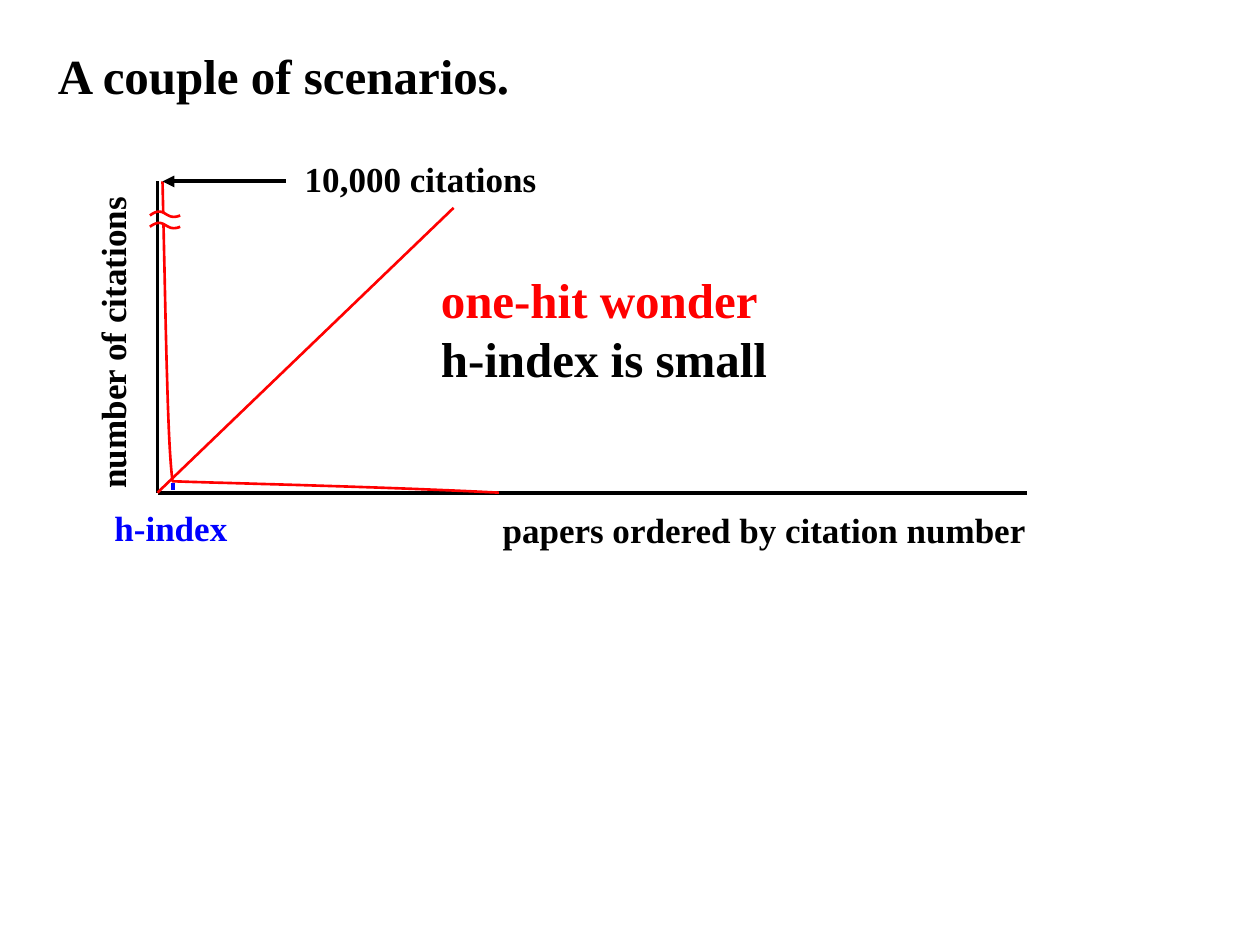
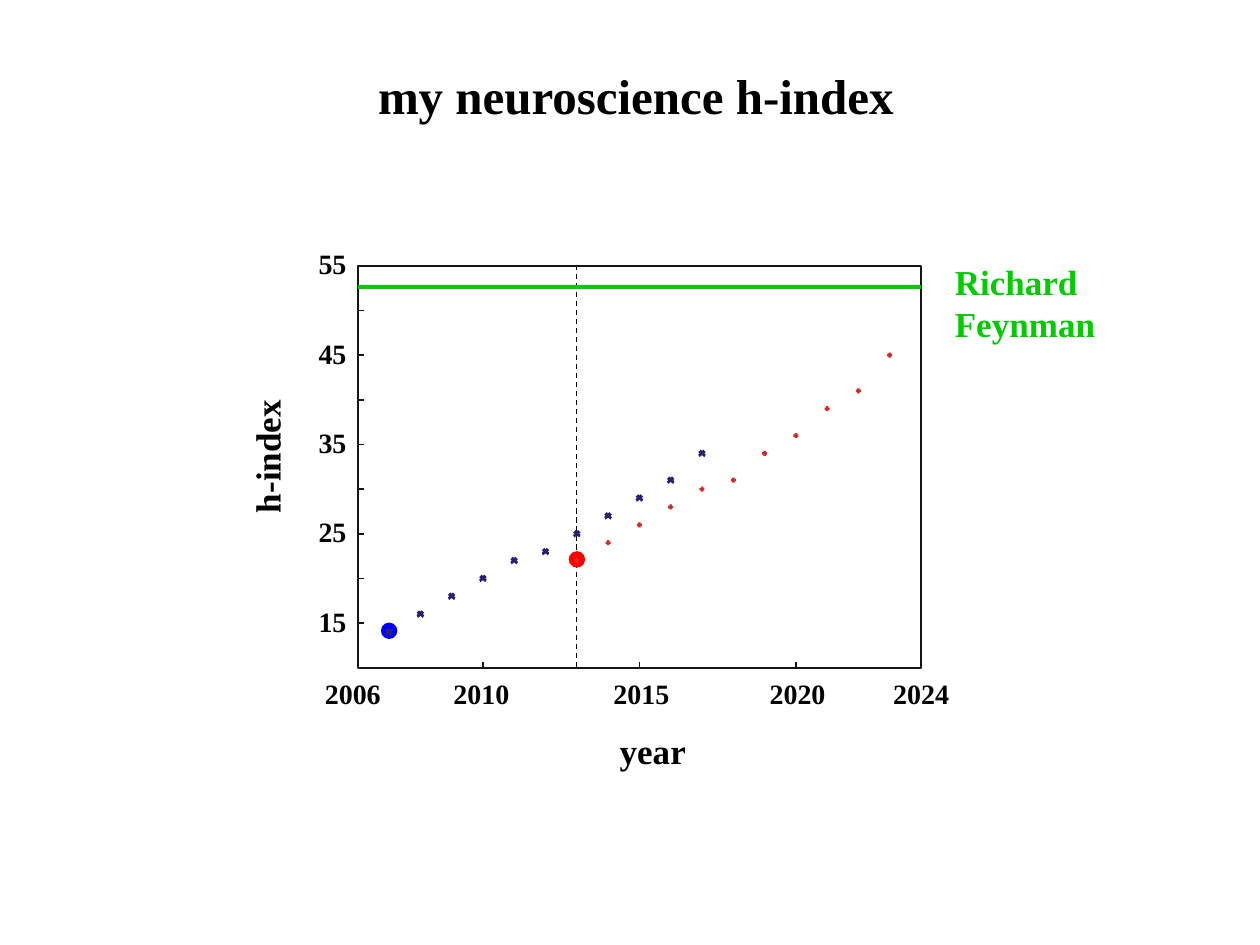
"""Build two slides on the h-index: a one-hit wonder and a personal history."""
import math

import pptx
import pptx.dml.color
import pptx.enum.dml
import pptx.enum.shapes
import pptx.enum.text
import pptx.oxml.ns
import pptx.util
from lxml import etree

Inches = pptx.util.Inches
RGBColor = pptx.dml.color.RGBColor
SHAPES = pptx.enum.shapes.MSO_SHAPE
BLACK = RGBColor(0x00, 0x00, 0x00)
WHITE = RGBColor(0xFF, 0xFF, 0xFF)
RED = RGBColor(0xFF, 0x00, 0x00)
BLUE = RGBColor(0x00, 0x00, 0xFF)
GREEN = RGBColor(0x00, 0xCC, 0x00)
FRAME = RGBColor(0x13, 0x15, 0x16)
PLUS_RED = RGBColor(0xDA, 0x27, 0x24)
CROSS_BLUE = RGBColor(0x2A, 0x1F, 0x74)
FONT = "Times New Roman"
TITLE_SIZE, LABEL_SIZE, TICK_SIZE = 28, 20, 16


def write(box, place, size, *lines, rotation=0):
    """Place a text box and fill it with (text, colour) lines."""
    box.left, box.top, box.width, box.height = [Inches(n) for n in place]
    box.rotation = rotation
    frame = box.text_frame
    frame.word_wrap = False
    frame.auto_size = pptx.enum.text.MSO_AUTO_SIZE.SHAPE_TO_FIT_TEXT
    frame.vertical_anchor = pptx.enum.text.MSO_ANCHOR.TOP
    for index, (text, color) in enumerate(lines):
        paragraph = frame.add_paragraph() if index else frame.paragraphs[0]
        paragraph.alignment = pptx.enum.text.PP_ALIGN.LEFT
        run = paragraph.add_run()
        run.text = text
        run.font.name = FONT
        run.font.size = pptx.util.Pt(size)
        run.font.bold = True
        run.font.color.rgb = color


def draw_line(shapes, start, end, color, width):
    """Draw a straight line without a shadow."""
    line = shapes.add_connector(pptx.enum.shapes.MSO_CONNECTOR.STRAIGHT,
                                *[Inches(n) for n in (*start, *end)])
    line.line.color.rgb = color
    line.line.width = pptx.util.Pt(width)
    etree.SubElement(line._element.spPr, pptx.oxml.ns.qn("a:effectLst"))
    return line


deck = pptx.Presentation()
deck.slide_width, deck.slide_height = Inches(10), Inches(7.5)
title_only = deck.slide_layouts[5]

scenario = deck.slides.add_slide(title_only)
write(scenario.shapes.title, (0.36, 0.31, 3.82, 0.57), TITLE_SIZE,
      ("A couple of scenarios.", BLACK))

origin = (1.25, 3.91)
axes = scenario.shapes.add_group_shape().shapes
for axis_end in ((1.25, 1.44), (8.15, 3.91)):
    draw_line(axes, origin, axis_end, BLACK, 2.25)

citation_curve = [
    [(3.96, 3.91), (2.94, 3.86), (1.96, 3.84), (1.37, 3.82)],
    [(1.37, 3.82), (1.33, 3.53), (1.32, 2.71), (1.29, 1.44)],
]
break_waves = [
    [[(1.43, y), (1.31, y + 0.05), (1.31, y - 0.09), (1.19, y)]]
    for y in (1.71, 1.8)
]
axis_gap = [[(1.27, 1.69), (1.27, 1.77), (1.35, 1.8), (1.34, 1.72)]]
STEPS = 24
for outline, is_gap in ((citation_curve, False), (axis_gap, True),
                        (break_waves[0], False), (break_waves[1], False)):
    points = []
    for controls in outline:
        if is_gap:
            points += controls
            continue
        for step in range(STEPS + 1):
            t = step / STEPS
            weights = [math.comb(3, k) * t**k * (1 - t)**(3 - k) for k in range(4)]
            points.append(tuple(sum(w * c[axis] for w, c in zip(weights, controls))
                                for axis in (0, 1)))
    points = [(Inches(x), Inches(y)) for x, y in points]
    builder = scenario.shapes.build_freeform(*points[0])
    builder.add_line_segments(points[1:], close=is_gap)
    stroke = builder.convert_to_shape()
    stroke.shadow.inherit = False
    if is_gap:
        stroke.fill.solid()
        stroke.fill.fore_color.rgb = WHITE
    else:
        stroke.fill.background()
    stroke.line.color.rgb = WHITE if is_gap else RED
    stroke.line.width = pptx.util.Pt(0.75 if is_gap else 1.5)

peak_arrow = draw_line(scenario.shapes, (2.27, 1.44), (1.29, 1.44), BLACK, 2.25)
etree.SubElement(peak_arrow.line._get_or_add_ln(),
                 pptx.oxml.ns.qn("a:tailEnd"), type="triangle")
draw_line(scenario.shapes, origin, (3.6, 1.65), RED, 1.5)
draw_line(scenario.shapes, (1.37, 3.83), (1.37, 3.89), BLUE, 2.25)

for text, color, place, rotation in (
    ("number of citations", BLACK, (-0.37, 2.49, 2.53, 0.44), 270),
    ("10,000 citations", BLACK, (2.32, 1.2, 2.05, 0.44), 0),
    ("papers ordered by citation number", BLACK, (3.89, 3.99, 4.38, 0.44), 0),
    ("h-index", BLUE, (0.81, 3.97, 1.1, 0.44), 0),
):
    write(scenario.shapes.add_textbox(0, 0, 0, 0), place, LABEL_SIZE,
          (text, color), rotation=rotation)
write(scenario.shapes.add_textbox(0, 0, 0, 0), (3.4, 2.09, 2.82, 1.04), TITLE_SIZE,
      ("one-hit wonder", RED), ("h-index is small", BLACK))

history = deck.slides.add_slide(title_only)
write(history.shapes.title, (2.9, 0.47, 4.34, 0.57), TITLE_SIZE,
      ("my neuroscience h-index", BLACK))

LEFT, TOP, WIDTH, HEIGHT = 2.84, 2.11, 4.47, 3.19
RIGHT, BOTTOM = LEFT + WIDTH, TOP + HEIGHT
year_x = {year: LEFT + (year - 2006) * WIDTH / 18 for year in range(2006, 2025)}
index_y = {h: BOTTOM - (h - 10) * HEIGHT / 45 for h in range(10, 56)}

move_year = draw_line(history.shapes, (year_x[2013], 2.1), (year_x[2013], BOTTOM),
                      BLACK, 0.75)
move_year.line.dash_style = pptx.enum.dml.MSO_LINE.DASH
for h in range(10, 56, 5):
    draw_line(history.shapes, (LEFT, index_y[h]), (LEFT + 0.05, index_y[h]), FRAME, 1)
plot_frame = history.shapes.add_shape(
    SHAPES.RECTANGLE, *[Inches(n) for n in (LEFT, TOP, WIDTH, HEIGHT)])
plot_frame.shadow.inherit = False
plot_frame.fill.background()
plot_frame.line.color.rgb = FRAME
plot_frame.line.width = pptx.util.Pt(1)
for year in (2010, 2015, 2020):
    draw_line(history.shapes, (year_x[year], BOTTOM), (year_x[year], BOTTOM - 0.05),
              FRAME, 1)

for year, label_left in ((2006, 2.48), (2010, 3.5), (2015, 4.77),
                         (2020, 6.01), (2024, 6.99)):
    write(history.shapes.add_textbox(0, 0, 0, 0), (label_left, 5.32, 0.65, 0.37),
          TICK_SIZE, (str(year), BLACK))
for h in range(55, 14, -10):
    write(history.shapes.add_textbox(0, 0, 0, 0), (2.43, index_y[h] - 0.2, 0.43, 0.37),
          TICK_SIZE, (str(h), BLACK))
write(history.shapes.add_textbox(0, 0, 0, 0), (4.82, 5.74, 0.73, 0.44),
      LABEL_SIZE, ("year", BLACK))
write(history.shapes.add_textbox(0, 0, 0, 0), (1.57, 3.4, 1.1, 0.44),
      LABEL_SIZE, ("h-index", BLACK), rotation=270)

draw_line(history.shapes, (LEFT, 2.28), (RIGHT, 2.28), GREEN, 2.25)
write(history.shapes.add_textbox(0, 0, 0, 0), (7.48, 2.02, 1.32, 0.77),
      LABEL_SIZE, ("Richard", GREEN), ("Feynman", GREEN))

DOT = 0.12
for year, h, color in ((2013, 22, RED), (2007, 14, BLUE)):
    start_dot = history.shapes.add_shape(
        SHAPES.OVAL, Inches(year_x[year] - DOT / 2), Inches(index_y[h] - DOT / 2 - 0.01),
        Inches(DOT), Inches(DOT))
    start_dot.shadow.inherit = False
    start_dot.fill.solid()
    start_dot.fill.fore_color.rgb = color
    start_dot.line.color.rgb = color
    start_dot.line.width = pptx.util.Pt(0.75)

bars = []
pluses = history.shapes.add_group_shape().shapes
for year, h in enumerate((22, 24, 26, 28, 30, 31, 34, 36, 39, 41, 45), 2013):
    for width, height in ((0.02, 0.04), (0.04, 0.02)):
        bar = pluses.add_shape(
            SHAPES.RECTANGLE, Inches(year_x[year] - width / 2),
            Inches(index_y[h] - height / 2), Inches(width), Inches(height))
        bars.append((bar, PLUS_RED))

crosses = history.shapes.add_group_shape().shapes
for year, h in enumerate((14, 16, 18, 20, 22, 23, 25, 27, 29, 31, 34), 2007):
    for side in (1, -1):
        corners = [(Inches(year_x[year] + side * x), Inches(index_y[h] + y))
                   for x, y in ((0.02, 0.03), (-0.03, -0.01), (-0.01, -0.03), (0.03, 0.01))]
        builder = crosses.build_freeform(*corners[0])
        builder.add_line_segments(corners[1:], close=True)
        bars.append((builder.convert_to_shape(), CROSS_BLUE))

for bar, color in bars:
    bar.shadow.inherit = False
    bar.fill.solid()
    bar.fill.fore_color.rgb = color
    bar.line.fill.background()

deck.save("out.pptx")
